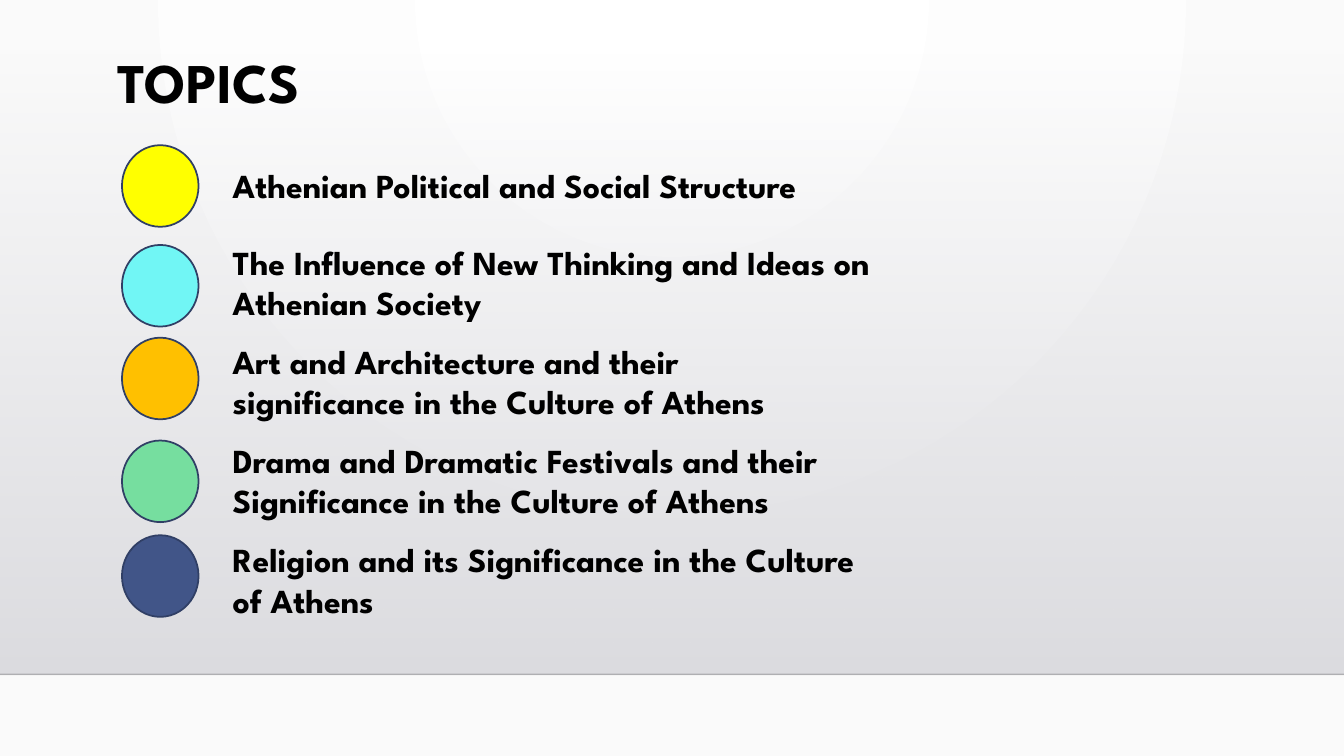
from lxml import etree
from pptx import Presentation
from pptx.dml.color import RGBColor
from pptx.enum.shapes import MSO_CONNECTOR, MSO_SHAPE
from pptx.enum.text import MSO_AUTO_SIZE
from pptx.oxml.ns import qn
from pptx.util import Emu, Pt

STRAIGHT = MSO_CONNECTOR.STRAIGHT
RECTANGLE, OVAL = MSO_SHAPE.RECTANGLE, MSO_SHAPE.OVAL
GROW = MSO_AUTO_SIZE.SHAPE_TO_FIT_TEXT

SCALE = 9144  # EMU in one px, 100 px to the inch
WIDTH, HEIGHT = 1333, 750
FLOOR = 669
FONT = "League Spartan"
COLOURS = {
    "text": "000000", "white": "FFFFFF", "rim": "FAFAFA",
    "wall_top": "DCDCE0", "wall_bottom": "DEDEE2", "floor_line": "000001",
    "outline": "303F65", "yellow": "FFFF00", "cyan": "71F6F5",
    "orange": "FFC000", "green": "76DE9F", "blue": "415588",
}

# circle top, circle colour, text top, text width, text height, wording
TOPICS = [
    (144, "yellow", 159, 641, 50, "Athenian Political and Social Structure"),
    (243, "cyan", 235, 706, 91,
     "The Influence of New Thinking and Ideas on Athenian Society"),
    (335, "orange", 333, 641, 91,
     "Art and Architecture and their significance in the Culture of Athens"),
    (437, "green", 431, 686, 91,
     "Drama and Dramatic Festivals and their Significance in the Culture of Athens"),
    (531, "blue", 530, 641, 91,
     "Religion and its Significance in the Culture of Athens"),
]


def px(*lengths):
    return [Emu(length * SCALE) for length in lengths]


def colour(name):
    return RGBColor.from_string(COLOURS[name])


def set_alpha(colour_element, percent):
    etree.SubElement(colour_element, qn("a:alpha"), val=str(percent * 1000))


def set_gradient(fill, first, last):
    fill.gradient()
    for stop, name, position in zip(fill.gradient_stops, (first, last), (0, 1)):
        stop.color.rgb = colour(name)
        stop.position = position


class TopicSlide:
    def __init__(self, deck):
        self.page = deck.slides.add_slide(deck.slide_layouts[6])
        self.shapes = self.page.shapes

    def spotlight(self, first, last):
        """Fill the background with a circular gradient centred on the top edge."""
        set_gradient(self.page.background.fill, first, last)
        linear = self.page.element.find(".//" + qn("a:lin"))
        gradient = linear.getparent()
        gradient.remove(linear)
        circle = etree.SubElement(gradient, qn("a:path"), path="circle")
        etree.SubElement(circle, qn("a:fillToRect"),
                         l="43000", t="0", r="43000", b="100000")

    def wall(self, left, top, width, height):
        """Draw a rectangle that fades in from clear at its top."""
        wall = self.shapes.add_shape(RECTANGLE, *px(left, top, width, height))
        wall.shadow.inherit = False
        set_gradient(wall.fill, "wall_top", "wall_bottom")
        wall.fill.gradient_angle = 270
        set_alpha(wall.element.spPr.find(".//" + qn("a:srgbClr")), 0)
        wall.line.fill.background()

    def rule(self, left, right, top):
        rule = self.shapes.add_connector(STRAIGHT, *px(left, top, right, top))
        rule.line.width = Pt(1)
        rule.line.color.rgb = colour("floor_line")
        properties = rule.element.spPr
        set_alpha(properties.find(".//" + qn("a:srgbClr")), 20)
        etree.SubElement(properties, qn("a:effectLst"))

    def circle(self, left, top, width, height, fill):
        circle = self.shapes.add_shape(OVAL, *px(left, top, width, height))
        circle.shadow.inherit = False
        circle.fill.solid()
        circle.fill.fore_color.rgb = colour(fill)
        circle.line.color.rgb = colour("outline")
        circle.line.width = Pt(1.25)

    def text(self, left, top, width, height, wording, size):
        box = self.shapes.add_textbox(*px(left, top, width, height))
        frame = box.text_frame
        frame.word_wrap = True
        frame.auto_size = GROW
        span = frame.paragraphs[0].add_run()
        span.text = wording
        span.font.name = FONT
        span.font.size = Pt(size)
        span.font.bold = True
        span.font.color.rgb = colour("text")


def main():
    deck = Presentation()
    deck.slide_width, deck.slide_height = px(WIDTH, HEIGHT)
    slide = TopicSlide(deck)
    slide.spotlight("white", "rim")
    slide.wall(0, 51, WIDTH, FLOOR - 51)
    slide.rule(0, WIDTH, FLOOR)
    slide.text(107, 42, 487, 77, "TOPICS", 40)
    for circle_top, fill, text_top, width, height, wording in TOPICS:
        slide.circle(121, circle_top, 76, 81, fill)
        slide.text(221, text_top, width, height, wording, 24)
    deck.save("out.pptx")


if __name__ == "__main__":
    main()
